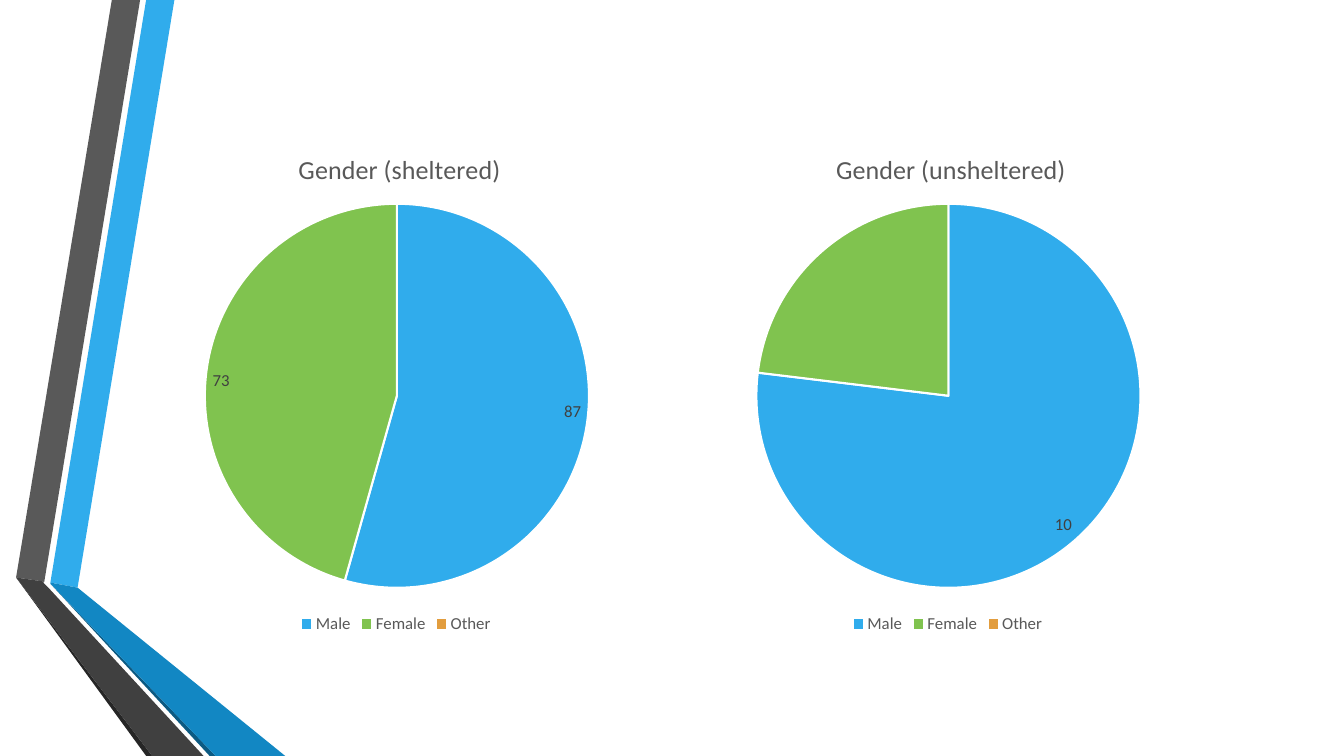
"""Build a slide with two gender pie charts beside a folded ribbon."""
import pptx
import pptx.chart.data
import pptx.dml.color
import pptx.enum.chart
import pptx.oxml
import pptx.oxml.ns
import pptx.util
from pptx.util import Inches, Pt

COLORS = {
    "blue": "30ACEC", "green": "80C34F", "orange": "E29D3E", "white": "FFFFFF",
    "gray": "595959", "label": "404040", "black": "262626",
    "deep_blue": "0C5A82", "mid_blue": "1287C3",
}
FONT = "Calibri"
RIBBONS = [
    ("blue", [(0.5, 5.78), (0.77, 5.83), (1.73, 0), (1.45, 0)]),
    ("gray", [(1.39, 0), (1.11, 0), (0.16, 5.73), (0.44, 5.77)]),
    ("black", [(0.16, 5.73), (1.45, 7.5), (1.51, 7.5)]),
    ("deep_blue", [(0.5, 5.79), (2.08, 7.5), (2.14, 7.5)]),
    ("mid_blue", [(0.5, 5.79), (2.14, 7.5), (2.83, 7.5), (0.77, 5.83), (0.5, 5.78)]),
    ("label", [(2.02, 7.5), (0.48, 5.83), (0.43, 5.78), (0.44, 5.77),
               (0.16, 5.73), (1.51, 7.5)]),
]
CATEGORIES = ["Male", "Female", "Other"]
SLICE_COLORS = ["blue", "green", "orange"]
CHARTS = [
    {"title": "Gender (sheltered)", "left": 1.62, "values": (87, 73, 0),
     "labelled": (0, 1), "title_x": 0.28},
    {"title": "Gender (unsheltered)", "left": 7.09, "values": (10, 3, 0),
     "labelled": (0,), "title_x": 0.25},
]
CHART_TOP, CHART_WIDTH, CHART_HEIGHT = 1.25, 4.62, 5.08
TITLE_Y = 0.04
PIE_LEFT, PIE_TOP, PIE_SIZE = 0.41, 0.77, 3.81


def color(name):
    return pptx.dml.color.RGBColor.from_string(COLORS[name])


def style_font(font, size, name):
    font.name = FONT
    font.size = Pt(size)
    font.bold = False
    font.color.rgb = color(name)


def make_layout(target=None, **fractions):
    entries = {"layoutTarget": target} if target else {}
    entries.update(xMode="edge", yMode="edge", **fractions)
    children = "".join(f'<c:{tag} val="{value}"/>' for tag, value in entries.items())
    return pptx.oxml.parse_xml(
        f'<c:layout {pptx.oxml.ns.nsdecls("c")}><c:manualLayout>{children}'
        "</c:manualLayout></c:layout>")


def replace_layout(parent, layout, index):
    for old in parent.findall(pptx.oxml.ns.qn("c:layout")):
        parent.remove(old)
    parent.insert(index, layout)


def add_ribbon(slide, name, points):
    builder = slide.shapes.build_freeform(
        Inches(points[0][0]), Inches(points[0][1]), scale=1.0)
    builder.add_line_segments([(Inches(x), Inches(y)) for x, y in points[1:]], close=True)
    shape = builder.convert_to_shape()
    shape.shadow.inherit = False
    shape.fill.solid()
    shape.fill.fore_color.rgb = color(name)
    shape.line.fill.background()


def add_pie(slide, content):
    data = pptx.chart.data.CategoryChartData()
    data.categories = CATEGORIES
    data.add_series("Series 1", content["values"])
    chart = slide.shapes.add_chart(
        pptx.enum.chart.XL_CHART_TYPE.PIE, Inches(content["left"]), Inches(CHART_TOP),
        Inches(CHART_WIDTH), Inches(CHART_HEIGHT), data).chart
    style_font(chart.font, 12, "gray")

    chart.has_title = True
    title = chart.chart_title
    title.text_frame.text = content["title"]
    style_font(title.text_frame.paragraphs[0].runs[0].font, 18.6, "gray")
    title.include_in_layout = False
    replace_layout(title._element, make_layout(x=content["title_x"], y=TITLE_Y), 1)

    chart.has_legend = True
    chart.legend.position = pptx.enum.chart.XL_LEGEND_POSITION.BOTTOM
    chart.legend.include_in_layout = False
    style_font(chart.legend.font, 12, "gray")

    plot = chart.plots[0]
    plot.vary_by_categories = True
    series = plot.series[0]
    for index, name in enumerate(SLICE_COLORS):
        point = series.points[index]
        point.format.fill.solid()
        point.format.fill.fore_color.rgb = color(name)
        point.format.line.color.rgb = color("white")
        point.format.line.width = Pt(1.5)
    for index in content["labelled"]:
        label = series.points[index].data_label
        style_font(label.font, 12, "label")
        label.position = pptx.enum.chart.XL_LABEL_POSITION.INSIDE_END
    series.data_labels.show_value = False

    plot_area = chart._chartSpace.chart.plotArea
    replace_layout(plot_area, make_layout(
        "inner", x=round(PIE_LEFT / CHART_WIDTH, 3), y=round(PIE_TOP / CHART_HEIGHT, 3),
        w=round(PIE_SIZE / CHART_WIDTH, 3), h=round(PIE_SIZE / CHART_HEIGHT, 3)), 0)


def main():
    presentation = pptx.Presentation()
    presentation.slide_width = Inches(13.33)
    presentation.slide_height = Inches(7.5)
    slide = presentation.slides.add_slide(presentation.slide_layouts[6])
    for name, points in RIBBONS:
        add_ribbon(slide, name, points)
    for content in CHARTS:
        add_pie(slide, content)
    presentation.save("out.pptx")


if __name__ == "__main__":
    main()
